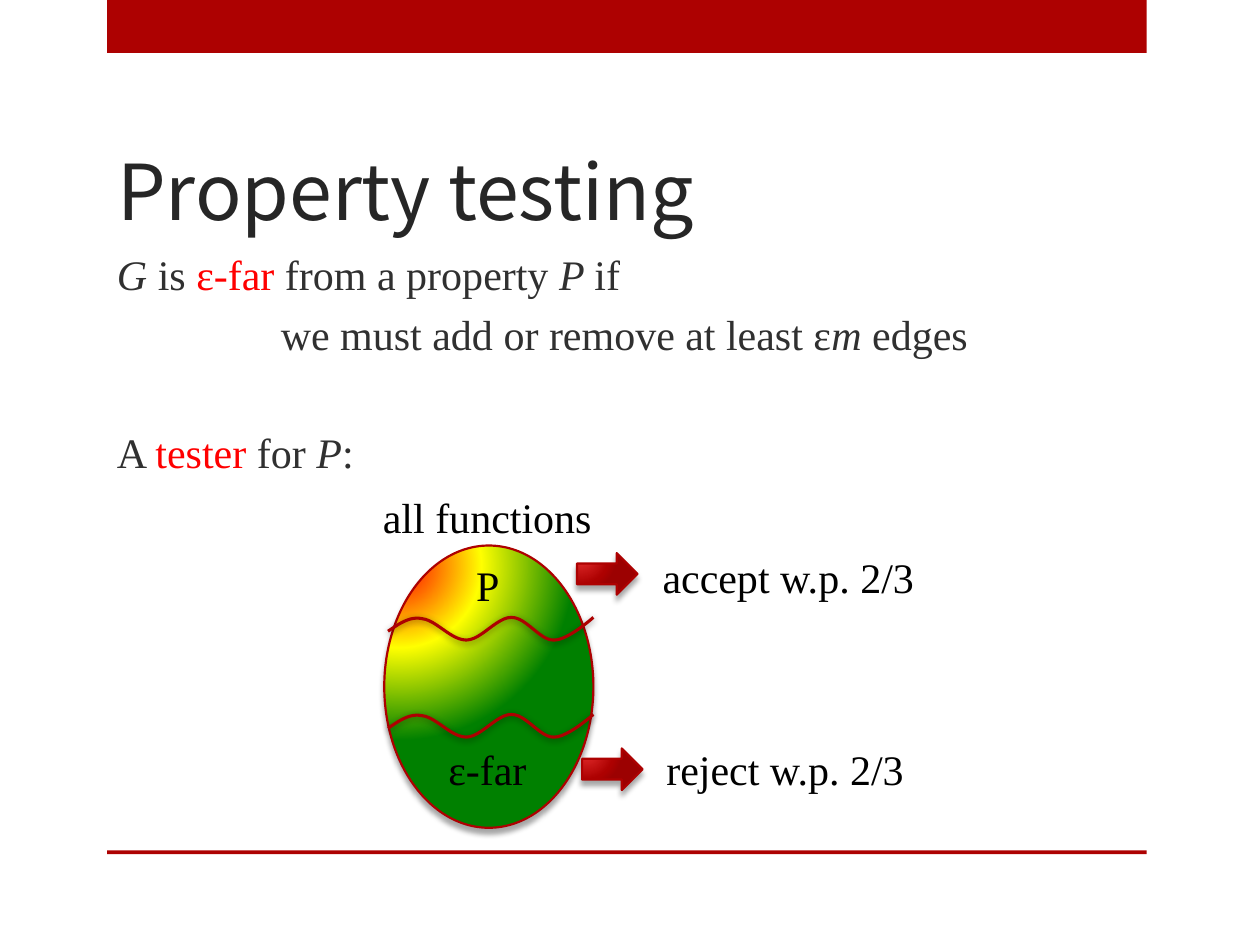
import pptx
import pptx.util
import pptx.dml.color
import pptx.enum.shapes
import pptx.enum.text
import pptx.oxml
import pptx.oxml.ns
from dataclasses import dataclass
from typing import Any

Inches = pptx.util.Inches
Pt = pptx.util.Pt
Kind = pptx.enum.shapes.MSO_SHAPE
Align = pptx.enum.text.PP_ALIGN

COLORS = {"brand": "AD0101", "title": "262626", "body": "303030",
          "accent": "FF0000", "label": "000000"}
SERIF = "Times New Roman"
EGG_STOPS = ((0, "FF0000"), (47, "FFFF00"), (100, "008000"))
ARROW_STOPS = ((0, "E62F2F"), (76, "AD0101"), (100, "9C0101"))


@dataclass
class Span:
    text: str
    color: str = "body"
    italic: bool = False
    size: float = 24
    font: str = SERIF


@dataclass
class Line:
    spans: list[Span]
    align: Any = Align.LEFT
    before: float = 5.5


@dataclass
class Label:
    text: str
    left: float
    top: float
    width: float


@dataclass
class Shadow:
    alpha: int
    blur: float
    distance: float
    angle: int


SOFT = Shadow(35, 3, 3, 90)
WAVE_SHADOW = Shadow(40, 4, 1, 88)


def rgb(name: str) -> pptx.dml.color.RGBColor:
    return pptx.dml.color.RGBColor.from_string(COLORS[name])


def write(para: Any, spans: list[Span]) -> None:
    for span in spans:
        run = para.add_run()
        run.text = span.text
        run.font.name = span.font
        run.font.size = Pt(span.size)
        run.font.italic = span.italic
        run.font.color.rgb = rgb(span.color)


def add_bar(shapes: Any, top: float, height: float) -> None:
    bar = shapes.add_shape(Kind.RECTANGLE, Inches(0.85), Inches(top), Inches(8.25), Inches(height))
    bar.shadow.inherit = False
    bar.fill.solid()
    bar.fill.fore_color.rgb = rgb("brand")
    bar.line.fill.background()


def outline(shape: Any, width: float, shadow: Shadow) -> None:
    shape.line.color.rgb = rgb("brand")
    shape.line.width = Pt(width)
    shape.shadow.inherit = False
    effects = shape._element.spPr.find(pptx.oxml.ns.qn("a:effectLst"))
    effects.append(pptx.oxml.parse_xml(
        f'<a:outerShdw {pptx.oxml.ns.nsdecls("a")} blurRad="{Pt(shadow.blur)}" '
        f'dist="{Pt(shadow.distance)}" dir="{shadow.angle * 60000}" rotWithShape="0">'
        f'<a:srgbClr val="000000"><a:alpha val="{shadow.alpha * 1000}"/></a:srgbClr>'
        '</a:outerShdw>'))


def add_glossy(shapes: Any, kind: Any, left: float, top: float, width: float,
               height: float, stops: tuple) -> None:
    shape = shapes.add_shape(kind, Inches(left), Inches(top), Inches(width), Inches(height))
    shape.fill.background()
    properties = shape._element.spPr
    stop_xml = "".join(f'<a:gs pos="{place * 1000}"><a:srgbClr val="{color}"/></a:gs>'
                       for place, color in stops)
    gradient = pptx.oxml.parse_xml(
        f'<a:gradFill {pptx.oxml.ns.nsdecls("a")} rotWithShape="1"><a:gsLst>{stop_xml}</a:gsLst>'
        '<a:path path="circle"><a:fillToRect l="15000" t="15000" r="100000" b="100000"/>'
        '</a:path></a:gradFill>')
    properties.replace(properties.find(pptx.oxml.ns.qn("a:noFill")), gradient)
    outline(shape, 1.25, SOFT)


def add_wave(shapes: Any, top: float, steps: int = 12) -> None:
    start = (3.08, 0.11)
    curves = (((3.17, 0.05), (3.25, -0.01), (3.35, 0.01)),
              ((3.46, 0.02), (3.58, 0.18), (3.70, 0.18)),
              ((3.82, 0.18), (3.94, 0), (4.06, 0)),
              ((4.18, 0), (4.29, 0.19), (4.40, 0.18)),
              ((4.51, 0.18), (4.71, 0), (4.71, 0)))
    points = []
    anchor = start
    for first, second, end in curves:
        for step in range(1, steps + 1):
            t = step / steps
            weights = ((1 - t) ** 3, 3 * t * (1 - t) ** 2, 3 * t * t * (1 - t), t ** 3)
            x, y = (sum(w * p[axis] for w, p in zip(weights, (anchor, first, second, end)))
                    for axis in (0, 1))
            points.append((Inches(x), Inches(top + y)))
        anchor = end
    builder = shapes.build_freeform(Inches(start[0]), Inches(top + start[1]))
    builder.add_line_segments(points, close=False)
    wave = builder.convert_to_shape()
    wave.fill.background()
    outline(wave, 1.75, WAVE_SHADOW)


def add_label(shapes: Any, label: Label) -> None:
    box = shapes.add_textbox(Inches(label.left), Inches(label.top), Inches(label.width), Inches(0.5))
    box.text_frame.word_wrap = False
    box.text_frame.auto_size = pptx.enum.text.MSO_AUTO_SIZE.SHAPE_TO_FIT_TEXT
    write(box.text_frame.paragraphs[0], [Span(label.text, "label")])


def add_title(slide: Any) -> None:
    title = slide.shapes.title
    title.left, title.top = Inches(0.83), Inches(0.75)
    title.width, title.height = Inches(8.25), Inches(1.17)
    title.text_frame.vertical_anchor = pptx.enum.text.MSO_ANCHOR.BOTTOM
    para = title.text_frame.paragraphs[0]
    para.alignment = Align.LEFT
    write(para, [Span("Property testing", "title", size=44, font="Noto Sans CJK JP")])


def add_body(shapes: Any, lines: list[Line]) -> None:
    box = shapes.add_textbox(Inches(0.83), Inches(1.92), Inches(8.25), Inches(4.83))
    frame = box.text_frame
    frame.word_wrap = True
    for index, line in enumerate(lines):
        para = frame.add_paragraph() if index else frame.paragraphs[0]
        para.alignment = line.align
        para.space_before = Pt(line.before)
        write(para, line.spans)


def main() -> None:
    deck = pptx.Presentation()
    deck.slide_width, deck.slide_height = Inches(10), Inches(7.5)
    page = deck.slides.add_slide(deck.slide_layouts[5])
    add_bar(page.shapes, 0, 0.42)
    add_bar(page.shapes, 6.75, 0.03)
    add_title(page)
    add_body(page.shapes, [
        Line([Span("G ", italic=True), Span("is "), Span("ε-far", "accent"),
              Span(" from a property "), Span("P ", italic=True), Span("if")]),
        Line([Span("we must add or remove at least ε"), Span("m", italic=True),
              Span(" edges")], Align.CENTER),
        Line([Span("A "), Span("tester", "accent"), Span(" for "),
              Span("P", italic=True), Span(":")], before=39),
    ])

    functions = page.shapes.add_group_shape().shapes
    add_glossy(functions, Kind.OVAL, 3.05, 4.33, 1.66, 2.24, EGG_STOPS)
    for top in (4.9, 5.67):
        add_wave(functions, top)
    for label in (Label("P", 3.68, 4.39, 0.39), Label("ε-far", 3.46, 5.85, 0.83),
                  Label("all functions", 2.94, 3.85, 1.88)):
        add_label(functions, label)

    outcomes = page.shapes.add_group_shape().shapes
    for left, top in ((4.58, 4.39), (4.62, 5.94)):
        add_glossy(outcomes, Kind.RIGHT_ARROW, left, top, 0.48, 0.33, ARROW_STOPS)
    for label in (Label("accept w.p. 2/3", 5.16, 4.33, 2.22),
                  Label("reject w.p. 2/3", 5.19, 5.85, 2.11)):
        add_label(outcomes, label)
    deck.save("out.pptx")


if __name__ == "__main__":
    main()
